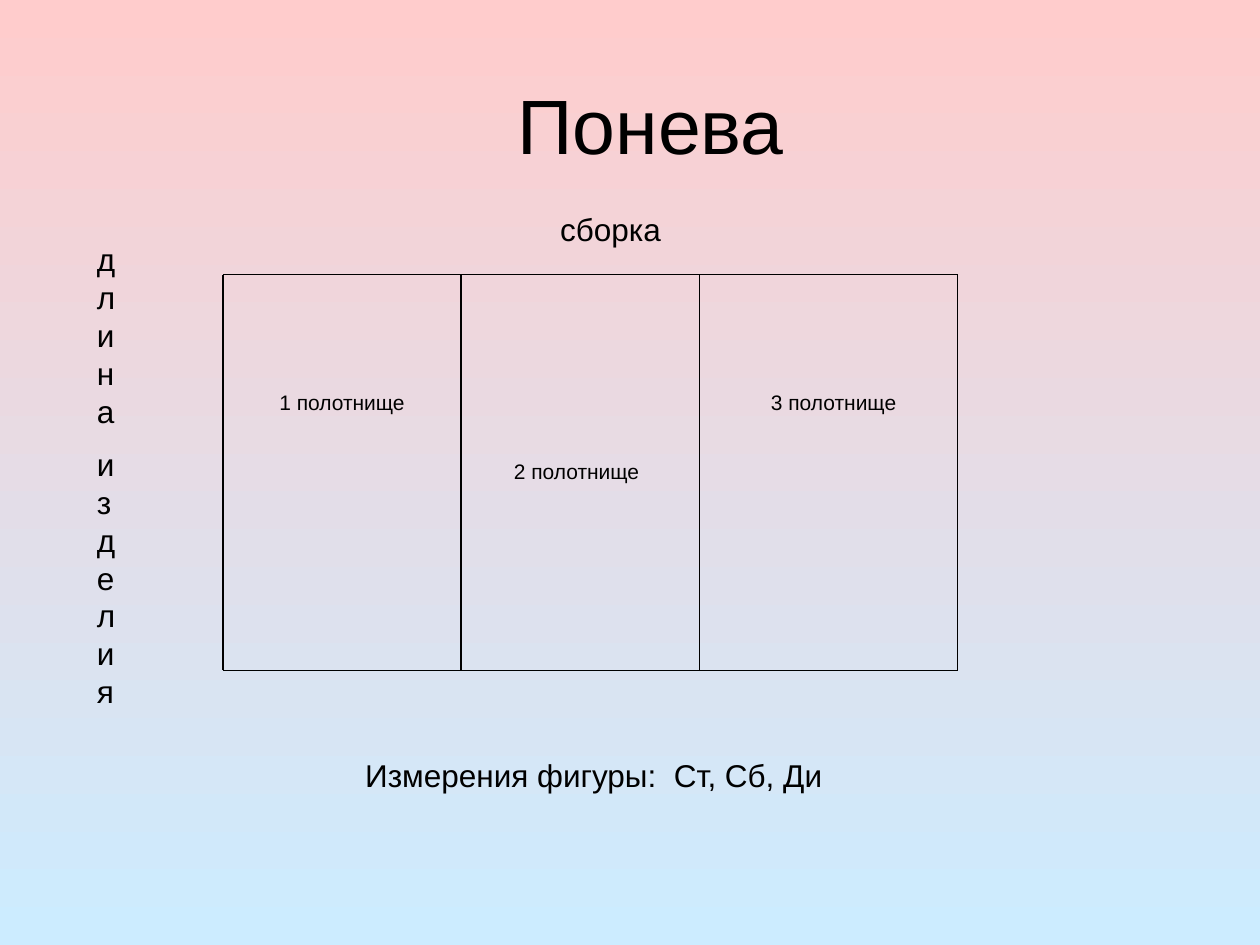
from dataclasses import dataclass

import pptx
import pptx.dml.color
import pptx.enum.shapes
import pptx.enum.text
import pptx.oxml
import pptx.oxml.ns
import pptx.util
from pptx.util import Inches

FONT = "Arial"
COLORS = {"ink": "000000", "sky": "CCECFF", "rose": "FFCCCC"}
LEFT, TOP, RIGHT, BOTTOM = 1.77, 2.18, 7.6, 5.32
SEAMS = (3.66, 5.55)
ALIGN = pptx.enum.text.PP_ALIGN
ANCHOR = pptx.enum.text.MSO_ANCHOR
AUTO_SIZE = pptx.enum.text.MSO_AUTO_SIZE


@dataclass
class Label:
    lines: tuple[str, ...]
    left: float
    top: float
    width: float
    height: float
    size: int = 18
    align: ALIGN = ALIGN.LEFT
    anchor: ANCHOR = ANCHOR.TOP
    auto_size: AUTO_SIZE = AUTO_SIZE.SHAPE_TO_FIT_TEXT
    wrap: bool = True


@dataclass
class Line:
    x1: float
    y1: float
    x2: float
    y2: float


LABELS = [
    Label(("Понева ",), 0.75, 0.36, 9, 1.25, 44, ALIGN.CENTER, ANCHOR.MIDDLE, AUTO_SIZE.NONE),
    Label(("длина", "и з делия"), 0.67, 1.86, 0.47, 4.16),
    Label(("сборка",), 2.64, 1.62, 4.41, 0.4, align=ALIGN.CENTER),
    Label(("1 полотнище",), 1.93, 3.04, 1.57, 0.3, 12, ALIGN.CENTER),
    Label(("2 полотнище",), 3.98, 3.59, 1.2, 0.3, 12, wrap=False),
    Label(("3 полотнище",), 6.02, 3.04, 1.2, 0.3, 12, wrap=False),
    Label(("Измерения фигуры:  Ст, Сб, Ди",), 2.8, 5.95, 5.12, 0.4),
]
LINES = [Line(x, TOP, x, BOTTOM) for x in (LEFT, *SEAMS, RIGHT)]
LINES += [Line(LEFT, y, RIGHT, y) for y in (TOP, BOTTOM)]


def rgb(name: str) -> pptx.dml.color.RGBColor:
    return pptx.dml.color.RGBColor.from_string(COLORS[name])


def paint_background(s: pptx.slide.Slide) -> None:
    fill = s.background.fill
    fill.gradient()
    fill.gradient_angle = 270
    for stop, name in zip(fill.gradient_stops, ("rose", "sky")):
        stop.color.rgb = rgb(name)


def draw_line(s: pptx.slide.Slide, line: Line) -> None:
    cxn = s.shapes.add_connector(
        pptx.enum.shapes.MSO_CONNECTOR.STRAIGHT,
        Inches(line.x1), Inches(line.y1), Inches(line.x2), Inches(line.y2),
    )
    cxn.line.color.rgb = rgb("ink")
    cxn.line.width = pptx.util.Pt(0.75)
    sp_pr = cxn._element.spPr
    sp_pr.append(sp_pr.makeelement(pptx.oxml.ns.qn("a:effectLst"), {}))


def draw_label(s: pptx.slide.Slide, label: Label) -> None:
    sp = s.shapes.add_textbox(
        Inches(label.left), Inches(label.top), Inches(label.width), Inches(label.height)
    )
    tf = sp.text_frame
    tf.word_wrap = label.wrap
    tf.auto_size = label.auto_size
    tf.vertical_anchor = label.anchor
    for i, line in enumerate(label.lines):
        p = tf.add_paragraph() if i else tf.paragraphs[0]
        p.text = line
        p.alignment = label.align
        p.space_before = pptx.util.Pt(label.size / 2 if i else 0)
        p.font.name = FONT
        p.font.size = pptx.util.Pt(label.size)
        p.font.color.rgb = rgb("ink")


def main() -> None:
    prs = pptx.Presentation()
    prs.slide_width, prs.slide_height = Inches(10), Inches(7.5)
    s = prs.slides.add_slide(prs.slide_layouts[6])
    paint_background(s)
    for line in LINES:
        draw_line(s, line)
    for label in LABELS:
        draw_label(s, label)
    prs.save("out.pptx")


if __name__ == "__main__":
    main()
